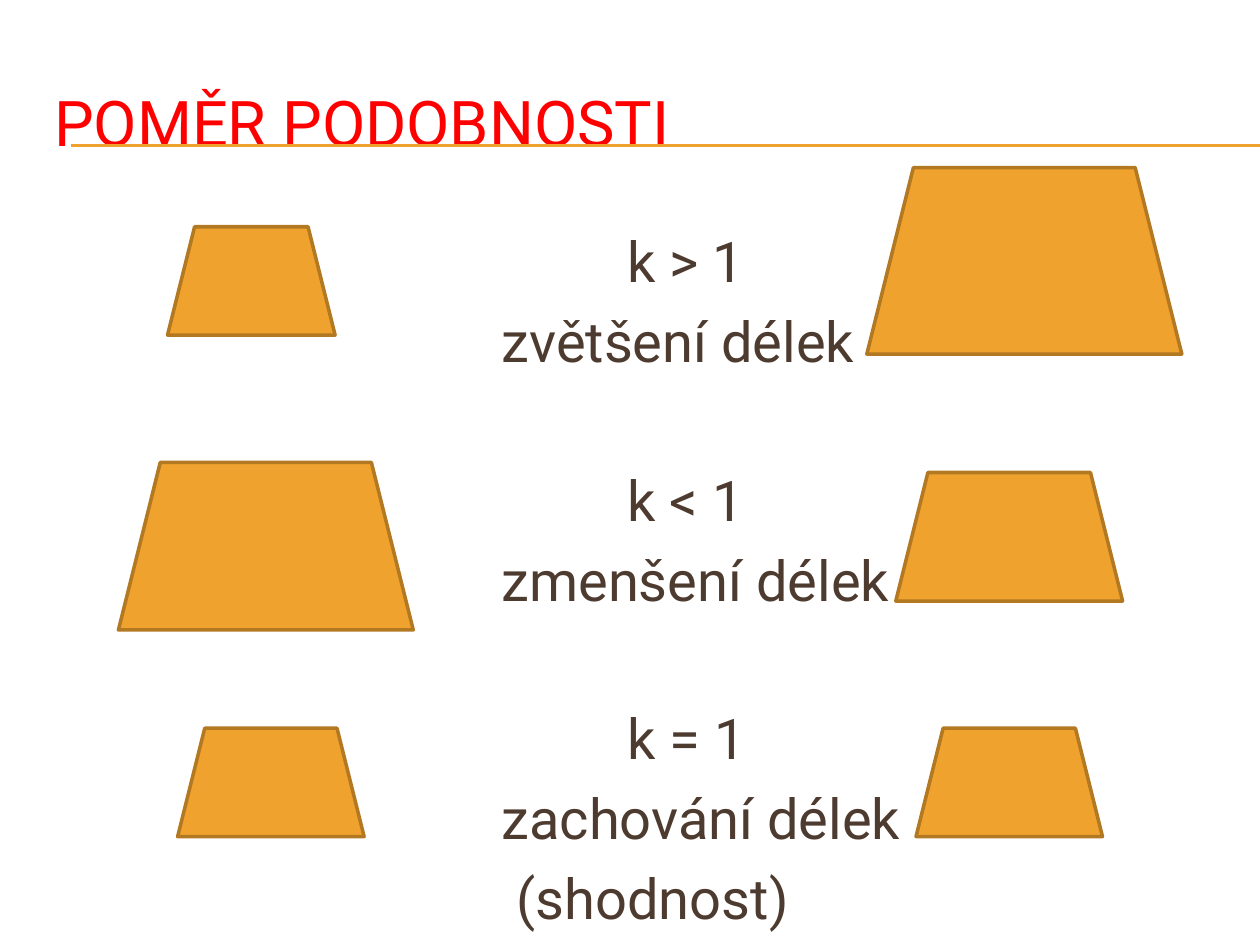
from typing import NamedTuple

from lxml.etree import SubElement
from pptx import Presentation
from pptx.dml.color import RGBColor
from pptx.enum.shapes import MSO_CONNECTOR, MSO_SHAPE
from pptx.enum.text import MSO_ANCHOR, MSO_AUTO_SIZE, PP_ALIGN
from pptx.oxml.ns import qn
from pptx.util import Inches, Pt

ORANGE = RGBColor(0xF0, 0xA2, 0x2E)
DARK_ORANGE = RGBColor(0xB2, 0x78, 0x22)
BROWN = RGBColor(0x4E, 0x3B, 0x30)
RED = RGBColor(0xFF, 0x00, 0x00)
FONT = "Roboto"

LINE_GAP = 7.3
GROUP_GAP = 52.1  # one empty line between the cases


class Box(NamedTuple):
    left: float
    top: float
    width: float
    height: float


class Case(NamedTuple):
    ratio: str
    effect: str
    pattern: Box
    image: Box


CASES = [
    Case("k > 1", "zvětšení délek",
         Box(1.33, 1.8, 1.33, 0.86), Box(6.88, 1.33, 2.5, 1.48)),
    Case("k < 1", "zmenšení délek",
         Box(0.94, 3.67, 2.34, 1.33), Box(7.11, 3.75, 1.8, 1.02)),
    Case("k = 1", "zachování délek",
         Box(1.41, 5.78, 1.48, 0.86), Box(7.27, 5.78, 1.48, 0.86)),
]


def place(sp, box: Box) -> None:
    sp.left, sp.top, sp.width, sp.height = map(Inches, box)


def write(p, text: str, *, size: float, color: RGBColor,
          indent: float = 0, before: float = 0) -> None:
    """Fill a paragraph with left-aligned text that has no bullet."""
    p.alignment = PP_ALIGN.LEFT
    p.space_before = Pt(before)
    pPr = p._p.get_or_add_pPr()
    pPr.set("marL", str(Inches(indent)))
    pPr.set("indent", "0")
    SubElement(pPr, qn("a:buNone"))
    r = p.add_run()
    r.text = text
    r.font.name = FONT
    r.font.size = Pt(size)
    r.font.color.rgb = color


def add_rule(slide, y: float) -> None:
    line = slide.shapes.add_connector(
        MSO_CONNECTOR.STRAIGHT, Inches(0.56), Inches(y), Inches(10), Inches(y))
    line.line.color.rgb = ORANGE
    line.line.width = Pt(0.75)
    SubElement(line._element.spPr, qn("a:effectLst"))


def add_trapezoid(slide, box: Box) -> None:
    sp = slide.shapes.add_shape(MSO_SHAPE.TRAPEZOID, *map(Inches, box))
    sp.shadow.inherit = False
    sp.fill.solid()
    sp.fill.fore_color.rgb = ORANGE
    sp.line.color.rgb = DARK_ORANGE
    sp.line.width = Pt(2)


def fill_title(slide) -> None:
    title = slide.shapes.title
    place(title, Box(0.33, 0.5, 9.5, 0.92))
    tf = title.text_frame
    tf.auto_size = MSO_AUTO_SIZE.NONE
    tf.vertical_anchor = MSO_ANCHOR.MIDDLE
    write(tf.paragraphs[0], "POMĚR PODOBNOSTI", size=36, color=RED)


def fill_body(slide) -> None:
    body = slide.placeholders[1]
    place(body, Box(0.5, 1.75, 9, 5.75))
    tf = body.text_frame
    tf.auto_size = MSO_AUTO_SIZE.NONE
    lines = []
    for case in CASES:
        lines.append((case.ratio, 4.38, GROUP_GAP if lines else LINE_GAP))
        lines.append((case.effect, 3.38, LINE_GAP))
    lines.append(("(shodnost)", 3.5, LINE_GAP))
    for i, (text, indent, before) in enumerate(lines):
        p = tf.add_paragraph() if i else tf.paragraphs[0]
        write(p, text, size=32, color=BROWN, indent=indent, before=before)


def main() -> None:
    prs = Presentation()
    prs.slide_width, prs.slide_height = Inches(10), Inches(7.5)
    slide = prs.slides.add_slide(prs.slide_layouts[1])
    for y in (1.15, 1.16):
        add_rule(slide, y)
    fill_title(slide)
    fill_body(slide)
    for case in CASES:
        add_trapezoid(slide, case.pattern)
        add_trapezoid(slide, case.image)
    prs.save("out.pptx")


if __name__ == "__main__":
    main()
